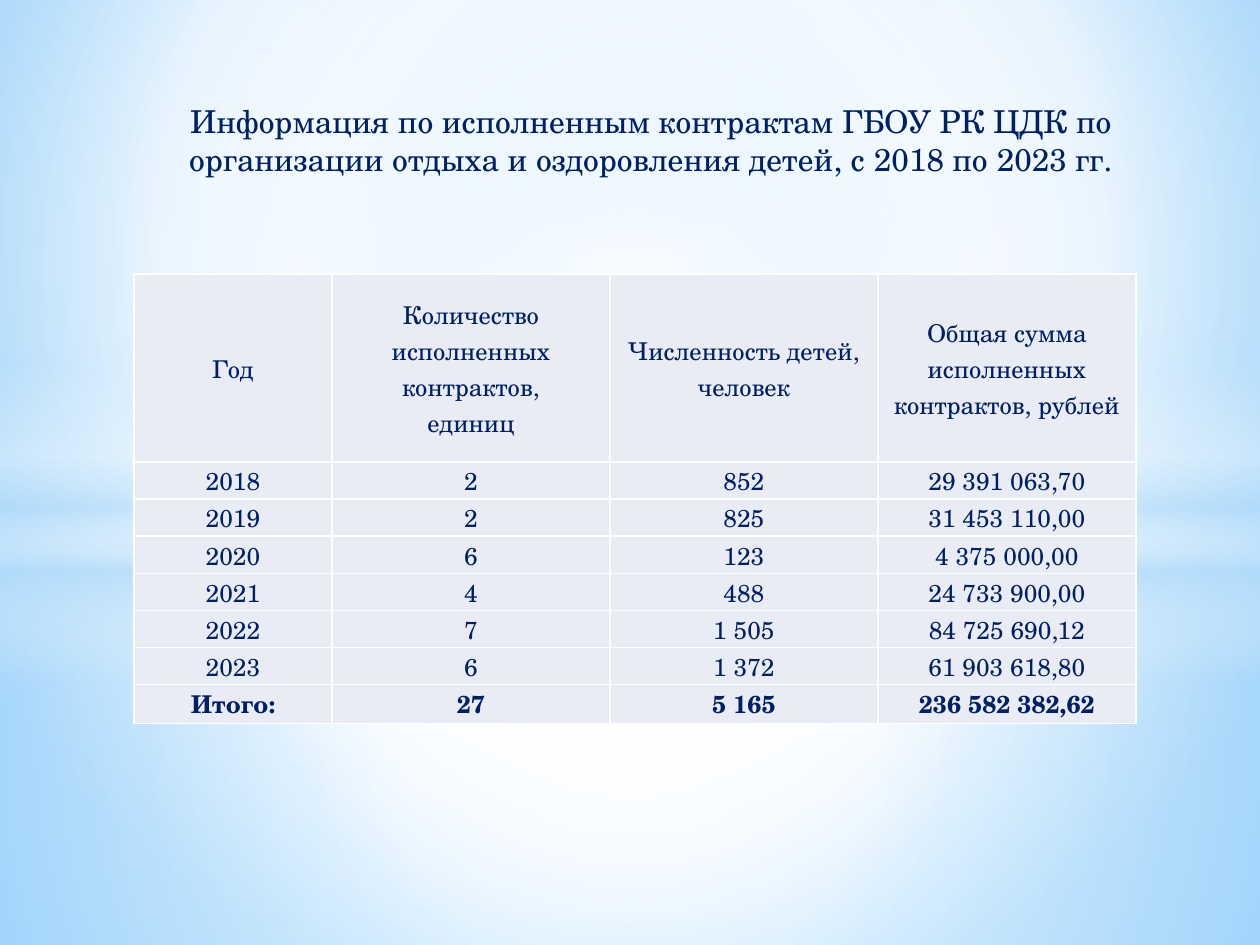
"""Builds a slide with a table of fulfilled contracts by year."""
from lxml import etree
from pptx import Presentation
from pptx.dml.color import RGBColor
from pptx.enum.shapes import MSO_SHAPE
from pptx.enum.text import MSO_ANCHOR, MSO_AUTO_SIZE, PP_ALIGN
from pptx.oxml.ns import qn
from pptx.util import Emu, Pt

RECT, OVAL = MSO_SHAPE.RECTANGLE, MSO_SHAPE.OVAL
TOP, MIDDLE = MSO_ANCHOR.TOP, MSO_ANCHOR.MIDDLE
CENTER = PP_ALIGN.CENTER
NAVY = RGBColor(0x00, 0x20, 0x60)
PALE = RGBColor(0xE9, 0xEB, 0xF5)
WHITE = RGBColor(0xFF, 0xFF, 0xFF)
MIST = RGBColor(0xB4, 0xDC, 0xFA)
SKY = RGBColor(0x9E, 0xD5, 0xFF)
BLUE = RGBColor(0x5B, 0xB9, 0xFF)
FONT = "TeX Gyre Schola"
MID = (50, 50, 50, 50)


def px(n):
    return Emu(n * 914400 // 126)


def blend(fill, root, stops, focus):
    fill.gradient()
    grad = root.xpath(".//a:gradFill")[0]
    for old in list(grad):
        grad.remove(old)
    group = etree.SubElement(grad, qn("a:gsLst"))
    for pos, color, alpha in stops:
        stop = etree.SubElement(group, qn("a:gs"), pos=str(pos * 1000))
        tint = etree.SubElement(stop, qn("a:srgbClr"), val=str(color))
        if alpha < 100:
            etree.SubElement(tint, qn("a:alpha"), val=str(alpha * 1000))
    if focus:
        way = etree.SubElement(grad, qn("a:path"), path="circle")
        sides = {k: str(v * 1000) for k, v in zip("ltrb", focus)}
        etree.SubElement(way, qn("a:fillToRect"), **sides)
    else:
        etree.SubElement(grad, qn("a:lin"), ang="5400000", scaled="0")


deck = Presentation()
deck.slide_width, deck.slide_height = px(1260), px(945)
slide = deck.slides.add_slide(deck.slide_layouts[5])
shapes = slide.shapes
blend(slide.background.fill, slide._element,
      [(0, SKY, 100), (60, WHITE, 100), (100, BLUE, 100)], (20, 10, 20, 60))

glows = [
    (RECT, 0, 533, 412, MID, [(0, WHITE, 91), (37, WHITE, 76), (100, MIST, 79)]),
    (RECT, 0, 0, 533, MID, [(0, WHITE, 89), (48, WHITE, 62), (100, MIST, 79)]),
    (RECT, 0, 365, 315, None, [(0, WHITE, 0), (29, WHITE, 30), (45, MIST, 40),
                               (55, WHITE, 26), (65, MIST, 60), (100, WHITE, 0)]),
    (OVAL, 0, 220, 703, MID, [(0, WHITE, 100), (54, WHITE, 0)]),
]
for kind, left, top, high, focus, stops in glows:
    glow = shapes.add_shape(kind, px(left), px(top), px(1260), px(high))
    glow.shadow.inherit = False
    glow.line.fill.background()
    blend(glow.fill, glow._element, stops, focus)

title = shapes.title
shapes._spTree.append(title._element)
title.left, title.top, title.width, title.height = px(144), px(96), px(989), px(110)
frame = title.text_frame
frame.text = ("Информация по исполненным контрактам ГБОУ РК ЦДК по "
              "организации отдыха и оздоровления детей, с 2018 по 2023 гг.")
frame.word_wrap = True
frame.auto_size = MSO_AUTO_SIZE.NONE
frame.vertical_anchor = TOP
para = frame.paragraphs[0]
para.alignment = CENTER
para.font.name, para.font.size, para.font.color.rgb = FONT, Pt(18), NAVY
props = para._p.get_or_add_pPr()
props.set("marL", str(px(25)))
props.set("indent", "0")

rows = [
    ("Год", "Количество исполненных контрактов,\nединиц",
     "Численность детей, человек", "Общая сумма исполненных контрактов, рублей"),
    ("2018", "2", "852", "29 391 063,70"),
    ("2019", "2", "825", "31 453 110,00"),
    ("2020", "6", "123", "4 375 000,00"),
    ("2021", "4", "488", "24 733 900,00"),
    ("2022", "7", "1 505", "84 725 690,12"),
    ("2023", "6", "1 372", "61 903 618,80"),
    ("Итого:", "27", "5 165", "236 582 382,62"),
]
wides = [198, 278, 268, 258]
highs = [188] + [37] * 6 + [39]
table = shapes.add_table(len(rows), len(wides), px(134), px(274),
                         px(sum(wides)), px(sum(highs))).table
for col, wide in zip(table.columns, wides):
    col.width = px(wide)
for r, (row, high) in enumerate(zip(rows, highs)):
    table.rows[r].height = px(high)
    for c, text in enumerate(row):
        cell = table.cell(r, c)
        cell.text = text
        cell.vertical_anchor = MIDDLE
        cell.margin_left = cell.margin_right = cell.margin_top = px(1)
        cell.margin_bottom = 0
        cell.fill.solid()
        cell.fill.fore_color.rgb = PALE
        for para in cell.text_frame.paragraphs:
            para.alignment = CENTER
            para.line_spacing = Pt(20.6)
            font = para.font
            font.name, font.size, font.color.rgb = FONT, Pt(14), NAVY
            font.bold = r == len(rows) - 1
        props = cell._tc.get_or_add_tcPr()
        for i, side in enumerate(("lnL", "lnR", "lnT", "lnB")):
            edge = etree.Element(qn("a:" + side), w=str(Pt(1)))
            paint = etree.SubElement(edge, qn("a:solidFill"))
            etree.SubElement(paint, qn("a:srgbClr"), val=str(WHITE))
            props.insert(i, edge)

deck.save("out.pptx")
